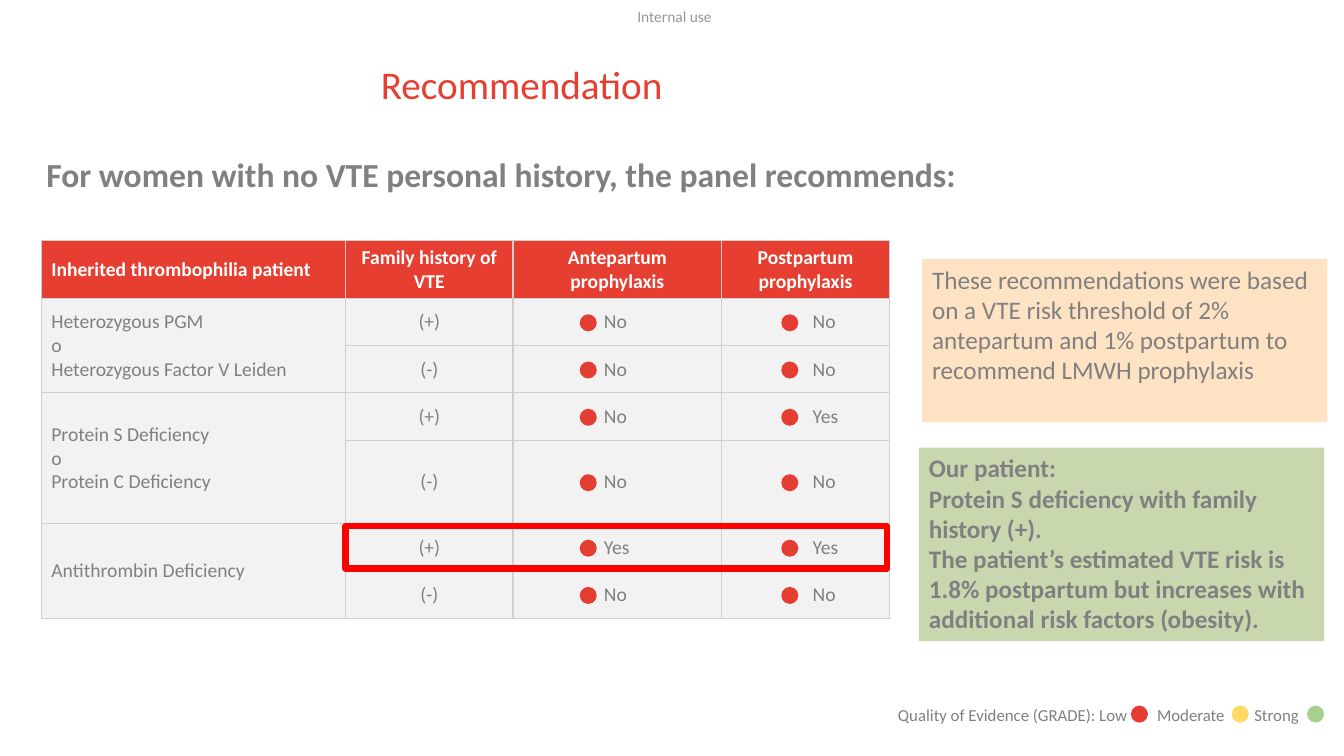
import pptx
import pptx.util
import pptx.dml.color
import pptx.enum.shapes
import pptx.enum.text
import pptx.oxml
import pptx.oxml.ns

Cm = pptx.util.Cm
Pt = pptx.util.Pt
RGBColor = pptx.dml.color.RGBColor
SHAPE = pptx.enum.shapes.MSO_SHAPE
ALIGN = pptx.enum.text.PP_ALIGN
ANCHOR = pptx.enum.text.MSO_ANCHOR

RED = RGBColor(0xE6, 0x3E, 0x30)
FRAME_RED = RGBColor(0xFF, 0x00, 0x00)
DOT_RED = RGBColor(0xE4, 0x3E, 0x32)
DOT_YELLOW = RGBColor(0xFF, 0xD9, 0x66)
DOT_GREEN = RGBColor(0xA9, 0xD1, 0x8E)
GREY = RGBColor(0x80, 0x80, 0x80)
LABEL_GREY = RGBColor(0x93, 0x97, 0x9B)
CELL_GREY = RGBColor(0xF2, 0xF2, 0xF2)
WHITE = RGBColor(0xFF, 0xFF, 0xFF)
PEACH = RGBColor(0xFE, 0xE2, 0xC4)
GREEN = RGBColor(0xC9, 0xD7, 0xAF)
BORDER = "D0CECE"


def write(frame, lines, size, color, bold=False, align=ALIGN.LEFT, margin=None):
    frame.word_wrap = True
    if margin is not None:
        frame.margin_left = frame.margin_right = margin
        frame.margin_top = frame.margin_bottom = margin
    for index, line in enumerate(lines):
        para = frame.add_paragraph() if index else frame.paragraphs[0]
        para.alignment = align
        span = para.add_run()
        span.text = line
        span.font.name = "Calibri"
        span.font.size = Pt(size)
        span.font.bold = bold
        span.font.color.rgb = color


def add_filled(shapes, kind, left, top, width, height, color):
    shape = shapes.add_shape(kind, Cm(left), Cm(top), Cm(width), Cm(height))
    shape.shadow.inherit = False
    shape.fill.solid()
    shape.fill.fore_color.rgb = color
    shape.line.fill.background()
    return shape


deck = pptx.Presentation()
deck.slide_width = Cm(33.87)
deck.slide_height = Cm(19.05)
page = deck.slides.add_slide(deck.slide_layouts[5])

label = page.shapes.add_textbox(Cm(15.8), Cm(0.18), Cm(2.4), Cm(0.46))
write(label.text_frame, ["Internal use"], 11, LABEL_GREY, align=ALIGN.CENTER, margin=0)

title = page.shapes.title
title.left, title.top, title.width, title.height = Cm(9.6), Cm(1.65), Cm(12.93), Cm(1.17)
write(title.text_frame, ["Recommendation"], 28, RED, margin=0)

subtitle = page.shapes.add_textbox(Cm(1.17), Cm(3.99), Cm(30.84), Cm(1.35))
write(subtitle.text_frame, ["For women with no VTE personal history, the panel recommends:"],
      24, GREY, bold=True, margin=0)

for heading in (title, subtitle):
    heading.text_frame.vertical_anchor = ANCHOR.TOP
    heading.text_frame.auto_size = pptx.enum.text.MSO_AUTO_SIZE.NONE
    heading.text_frame.paragraphs[0].line_spacing = 0.9

headers = ["Inherited thrombophilia patient", "Family history of VTE",
           "Antepartum prophylaxis", "Postpartum prophylaxis"]
patients = [
    ["Heterozygous PGM", "o", "Heterozygous Factor V Leiden"],
    ["Protein S Deficiency", "o", "Protein C Deficiency"],
    ["Antithrombin Deficiency"],
]
advice = [
    ("(+)", "No", "No"),
    ("(-)", "No", "No"),
    ("(+)", "No", "Yes"),
    ("(-)", "No", "No"),
    ("(+)", "Yes", "Yes"),
    ("(-)", "No", "No"),
]
column_widths = [7.67, 4.22, 5.26, 4.22]
row_heights = [1.45, 1.19, 1.19, 1.19, 2.11, 1.19, 1.19]
table_left, table_top = 1.04, 6.07

table = page.shapes.add_table(
    len(row_heights), len(column_widths), Cm(table_left), Cm(table_top),
    Cm(sum(column_widths)), Cm(sum(row_heights))).table
table.horz_banding = False
for column, width in zip(table.columns, column_widths):
    column.width = Cm(width)
for row, height in zip(table.rows, row_heights):
    row.height = Cm(height)

for row_index in range(len(row_heights)):
    for column_index in range(len(column_widths)):
        cell = table.cell(row_index, column_index)
        properties = cell._tc.get_or_add_tcPr()
        for side in ("lnL", "lnR", "lnT", "lnB"):
            properties.append(pptx.oxml.parse_xml(
                f'<a:{side} {pptx.oxml.ns.nsdecls("a")} w="12700"><a:solidFill>'
                f'<a:srgbClr val="{BORDER}"/></a:solidFill></a:{side}>'))
        cell.fill.solid()
        cell.fill.fore_color.rgb = CELL_GREY if row_index else RED
        cell.vertical_anchor = ANCHOR.MIDDLE

for column_index, header in enumerate(headers):
    write(table.cell(0, column_index).text_frame, [header], 14, WHITE, bold=True,
          align=ALIGN.CENTER if column_index else ALIGN.LEFT)

for index, patient in enumerate(patients):
    first_row = 1 + 2 * index
    cell = table.cell(first_row, 0)
    cell.merge(table.cell(first_row + 1, 0))
    write(cell.text_frame, patient, 14, GREY)

for row_index, answers in enumerate(advice, 1):
    for column_index, answer in enumerate(answers, 1):
        cell = table.cell(row_index, column_index)
        if column_index > 1:
            cell.margin_left = Cm(2.29)
        write(cell.text_frame, [answer], 14, GREY,
              align=ALIGN.CENTER if column_index == 1 else ALIGN.LEFT)

highlight = page.shapes.add_shape(SHAPE.RECTANGLE, Cm(8.71), Cm(13.26), Cm(13.64), Cm(1.07))
highlight.shadow.inherit = False
highlight.fill.background()
highlight.line.color.rgb = FRAME_RED
highlight.line.width = Pt(4.5)

notes = [
    (23.16, 11.28, 4.88, GREEN, True, [
        "Our patient:",
        "Protein S deficiency with family history (+).",
        "The patient’s estimated VTE risk is 1.8% postpartum but increases with "
        "additional risk factors (obesity)."]),
    (23.24, 6.53, 4.11, PEACH, False, [
        "These recommendations were based on a VTE risk threshold of 2% antepartum "
        "and 1% postpartum to recommend LMWH prophylaxis"]),
]
for left, top, height, color, bold, lines in notes:
    box = add_filled(page.shapes, SHAPE.RECTANGLE, left, top, 10.21, height, color)
    box.text_frame.vertical_anchor = ANCHOR.TOP
    write(box.text_frame, lines, 18, GREY, bold=bold)

dot_size = 0.43
for left in (14.61, 19.69):
    for row_index in range(1, len(row_heights)):
        middle = table_top + sum(row_heights[:row_index]) + row_heights[row_index] / 2
        add_filled(page.shapes, SHAPE.OVAL, left, middle - dot_size / 2 + 0.02,
                   dot_size, dot_size, DOT_RED)

legend = page.shapes.add_group_shape()
caption = legend.shapes.add_textbox(Cm(22.38), Cm(17.63), Cm(11.49), Cm(0.76))
caption_properties = caption.text_frame.paragraphs[0]._p.get_or_add_pPr()
caption_properties.append(pptx.oxml.parse_xml(
    f'<a:tabLst {pptx.oxml.ns.nsdecls("a")}>'
    f'<a:tab pos="{Cm(6.53)}" algn="l"/><a:tab pos="{Cm(8.98)}" algn="l"/></a:tabLst>'))
write(caption.text_frame, ["Quality of Evidence (GRADE): Low\tModerate\tStrong"], 12, GREY)
for left, color in ((28.5, DOT_RED), (31.04, DOT_YELLOW), (32.94, DOT_GREEN)):
    add_filled(legend.shapes, SHAPE.OVAL, left, 17.78, dot_size, dot_size, color)

deck.save("out.pptx")
